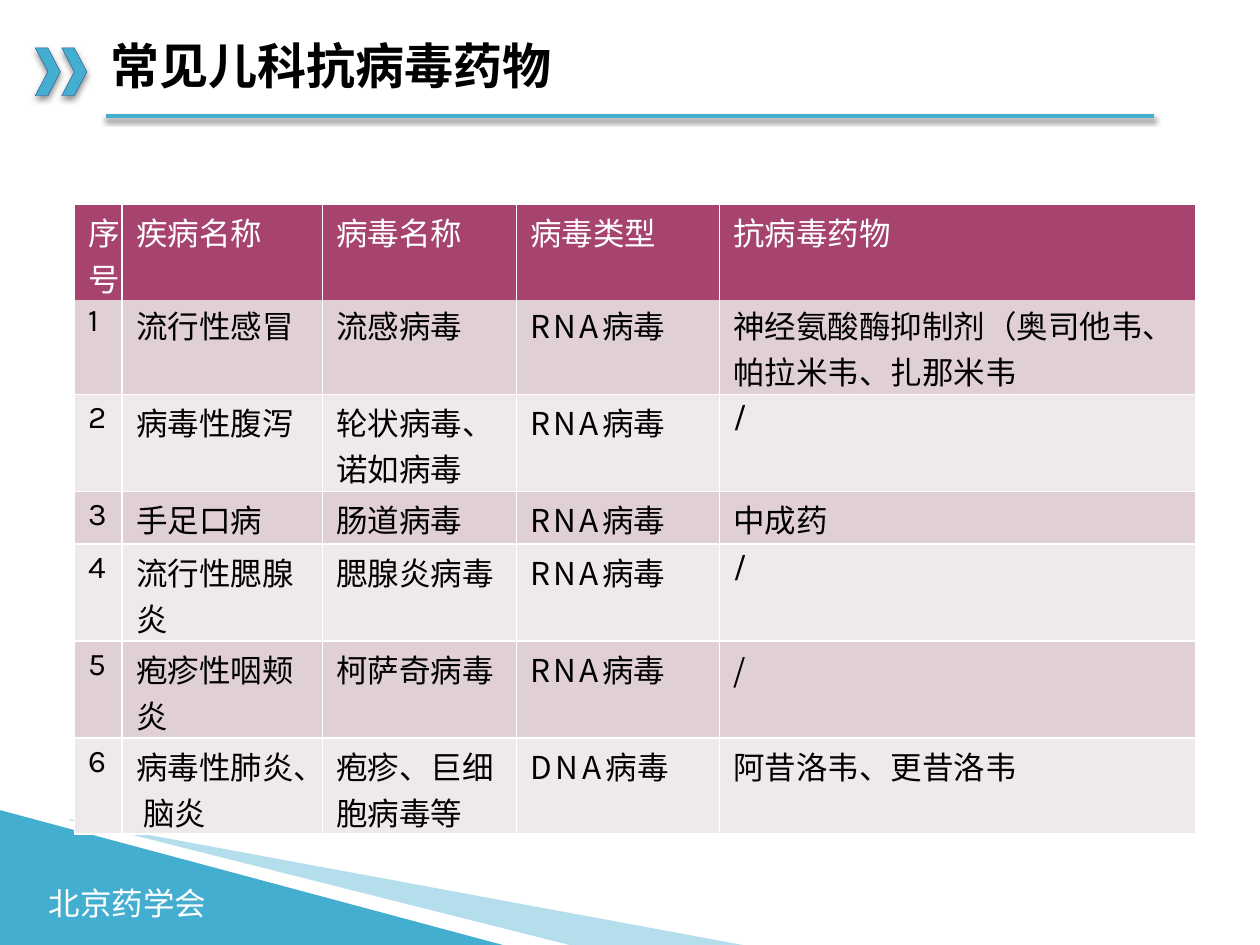
from lxml import etree
from pptx import Presentation
from pptx.dml.color import RGBColor
from pptx.enum import shapes, text
from pptx.oxml import parse_xml
from pptx.oxml.ns import nsdecls, qn
from pptx.util import Inches, Pt

CJK_SC = "Noto Sans CJK SC"
CJK_JP = "Noto Sans CJK JP"
BLUE, WHITE, BLACK = "44AED0", "FFFFFF", "000000"
HEADER, DARK_BAND, LIGHT_BAND = "A6446F", "E0CFD4", "F0E9EB"


def color(hex_code):
    return RGBColor.from_string(hex_code)


def write(paragraph, words, *, font, size=18, ink=BLACK, bold=False, spacing=0):
    run = paragraph.add_run()
    run.text = words
    run.font.name = font
    run.font.size = Pt(size)
    run.font.bold = bold
    run.font.color.rgb = color(ink)
    properties = run.font._element
    etree.SubElement(properties, qn("a:ea")).set("typeface", font)
    if spacing:
        properties.set("spc", str(round(spacing * 100)))


prs = Presentation()
prs.slide_width, prs.slide_height = Inches(10), Inches(7.5)
slide = prs.slides.add_slide(prs.slide_layouts[5])

# Title
title = slide.shapes.title
title.left, title.top = Inches(0.78), Inches(0.22)
title.width, title.height = Inches(7.64), Inches(0.65)
title.text_frame.vertical_anchor = text.MSO_ANCHOR.MIDDLE
heading = title.text_frame.paragraphs[0]
heading.alignment = text.PP_ALIGN.LEFT
heading.line_spacing = 0.9
write(heading, "常见儿科抗病毒药物", font=CJK_SC, size=28, bold=True)

# Rule under the title and the double chevron beside it
rule = slide.shapes.add_connector(
    shapes.MSO_CONNECTOR.STRAIGHT, Inches(9.16), Inches(0.92), Inches(0.84), Inches(0.92))
rule.line.color.rgb = color(BLUE)
rule.line.width = Pt(2.25)
shadowed = [(rule, "808080", 100, 3)]

chevrons = slide.shapes.add_group_shape()
for left in (0.49, 0.28):
    chevron = chevrons.shapes.add_shape(
        shapes.MSO_SHAPE.CHEVRON, Inches(left), Inches(0.38), Inches(0.2), Inches(0.38))
    chevron.fill.solid()
    chevron.fill.fore_color.rgb = color(BLUE)
    chevron.line.color.rgb = color("325491")
    chevron.line.width = Pt(0.25)
    shadowed.append((chevron, "000000", 46, 4))

for part, shade, opacity, blur in shadowed:
    part._element.spPr.append(parse_xml(
        f'<a:effectLst {nsdecls("a")}><a:outerShdw blurRad="{Pt(blur)}" dist="{Pt(2)}" '
        f'dir="5400000" algn="ctr" rotWithShape="0"><a:srgbClr val="{shade}">'
        f'<a:alpha val="{opacity * 1000}"/></a:srgbClr></a:outerShdw></a:effectLst>'))

# Corner wedge, pale ray and society name
wedge = slide.shapes.add_shape(
    shapes.MSO_SHAPE.ISOSCELES_TRIANGLE, Inches(0), Inches(6.43), Inches(3.99), Inches(1.07))
wedge.adjustments[0] = 0

ray_builder = slide.shapes.build_freeform(Inches(0.55), Inches(6.51), scale=1)
ray_builder.add_line_segments(
    [(Inches(x), Inches(y)) for x, y in ((5.95, 7.51), (4.56, 7.51), (0.55, 6.5))])
ray = ray_builder.convert_to_shape()

for corner in (wedge, ray):
    corner.shadow.inherit = False
    corner.fill.solid()
    corner.fill.fore_color.rgb = color(BLUE)
    corner.line.fill.background()
ray_color = ray._element.spPr.find(qn("a:solidFill"))[0]
etree.SubElement(ray_color, qn("a:alpha")).set("val", "40000")

society = slide.shapes.add_textbox(Inches(0.29), Inches(6.97), Inches(1.46), Inches(0.4))
society.text_frame.word_wrap = False
write(society.text_frame.paragraphs[0], "北京药学会", font=CJK_SC, ink=WHITE)

# Table of diseases, viruses and drugs
records = [
    ("序号", "疾病名称", "病毒名称", "病毒类型", "抗病毒药物"),
    ("1", "流行性感冒", "流感病毒", "RNA", "神经氨酸酶抑制剂（奥司他韦、帕拉米韦、扎那米韦"),
    ("2", "病毒性腹泻", "轮状病毒、诺如病毒", "RNA", "/"),
    ("3", "手足口病", "肠道病毒", "RNA", "中成药"),
    ("4", "流行性腮腺炎", "腮腺炎病毒", "RNA", "/"),
    ("5", "疱疹性咽颊炎", "柯萨奇病毒", "RNA", "/"),
    ("6", "病毒性肺炎、 脑炎", "疱疹、巨细胞病毒等", "DNA", "阿昔洛韦、更昔洛韦"),
]
column_widths = (0.38, 1.59, 1.54, 1.61, 3.78)
row_heights = (0.76, 0.75, 0.77, 0.42, 0.77, 0.77, 0.76)
acid_spacing = {"RNA": 1.9, "DNA": 2.2}

drugs = slide.shapes.add_table(
    len(records), len(column_widths), Inches(0.59), Inches(1.62),
    Inches(sum(column_widths)), Inches(sum(row_heights))).table
drugs.first_row = drugs.horz_banding = False
for column, width in zip(drugs.columns, column_widths):
    column.width = Inches(width)
for row, height in zip(drugs.rows, row_heights):
    row.height = Inches(height)

for r, record in enumerate(records):
    band = HEADER if r == 0 else DARK_BAND if r % 2 else LIGHT_BAND
    open_side = {0: "lnB", 1: "lnT"}.get(r)  # no line between header and first row
    for c, entry in enumerate(record):
        cell = drugs.cell(r, c)
        cell.margin_left, cell.margin_right = Inches(0.11), 0
        cell.margin_top, cell.margin_bottom = Inches(0.02 if r == 1 else 0.04), 0
        cell.fill.solid()
        cell.fill.fore_color.rgb = color(band)

        cell_properties = cell._tc.tcPr
        for position, side in enumerate(("lnL", "lnR", "lnT", "lnB")):
            paint = ("<a:noFill/>" if side == open_side else
                     f'<a:solidFill><a:srgbClr val="{WHITE}"/></a:solidFill>')
            cell_properties.insert(position, parse_xml(
                f'<a:{side} {nsdecls("a")} w="{Pt(1)}">{paint}</a:{side}>'))

        line = cell.text_frame.paragraphs[0]
        if entry in acid_spacing:
            write(line, entry, font=CJK_JP, spacing=acid_spacing[entry])
            write(line, "病毒", font=CJK_JP)
        else:
            karla = r > 0 and c == 0 or entry == "/" and r != 5
            write(line, entry, font="Karla" if karla else CJK_JP, ink=BLACK if r else WHITE)

prs.save("out.pptx")
